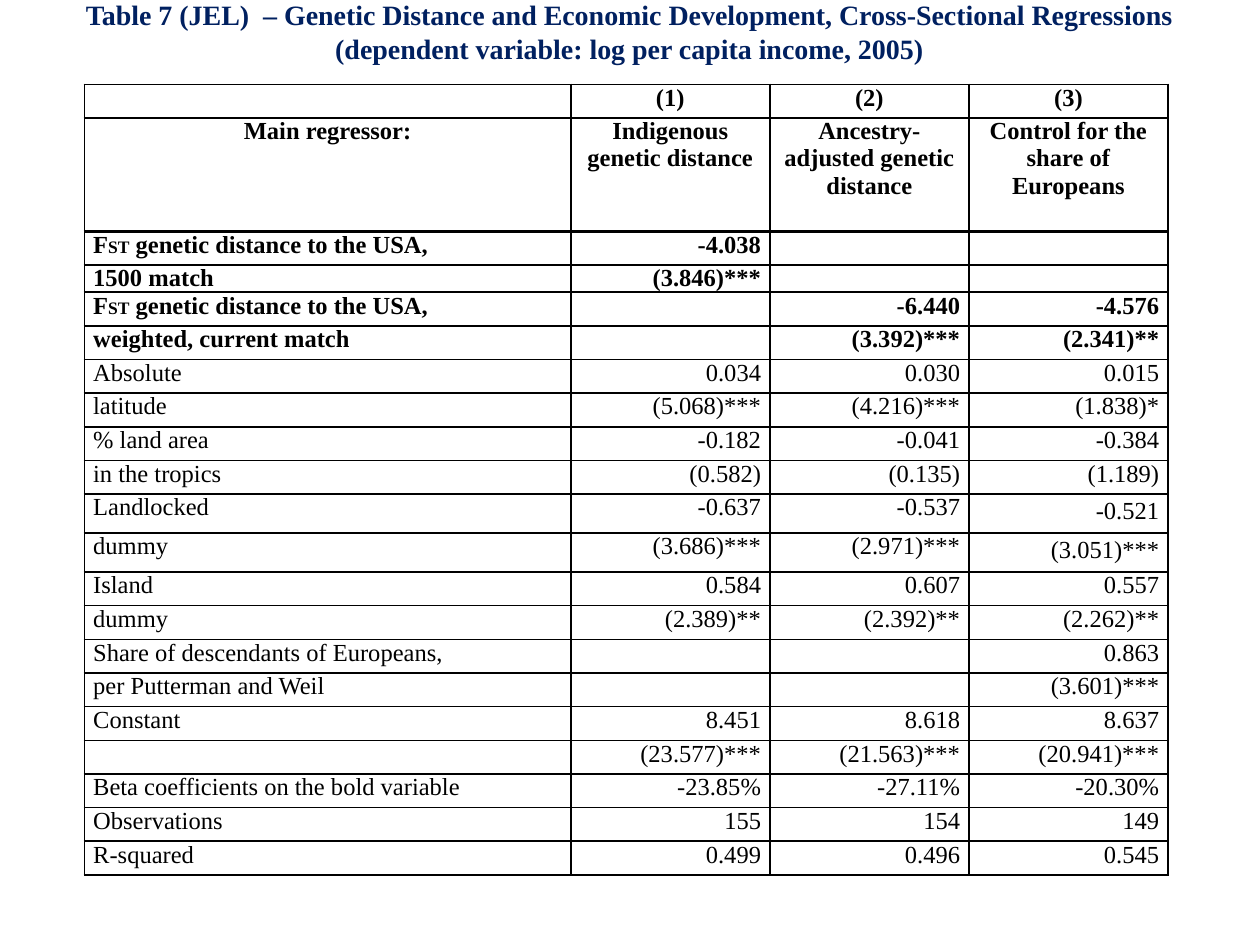
from lxml import etree
from pptx import Presentation
from pptx import util as u
from pptx.dml.color import RGBColor
from pptx.enum import text
from pptx.oxml.ns import qn

THEME = {
    "font": "Times New Roman",
    "title": RGBColor.from_string("002060"),
    "ink": RGBColor.from_string("000000"),
    "title_size": u.Pt(16),
    "body_size": u.Pt(14),
    "subscript_size": u.Pt(10),
    "thin": u.Pt(1),
    "thick": u.Pt(1.5),
}
NO_STYLE = "{2D5ABB26-0587-4C30-8999-92F81FD0307C}"

# Content
TITLE = [
    "Table 7 (JEL)  – Genetic Distance and Economic Development, Cross-Sectional Regressions",
    "(dependent variable: log per capita income, 2005)",
]
FST_LABEL = ("F", "ST", " genetic distance to the USA,")  # middle part is set small

# Each group is one ruled block: coefficient row, then its t-statistic row
HEADERS = [
    [["", "(1)", "(2)", "(3)"]],
    [["Main regressor:", "Indigenous genetic distance",
      "Ancestry-adjusted genetic distance", "Control for the share of Europeans"]],
]
BOLD_REGRESSORS = [
    [[FST_LABEL, "-4.038", "", ""],
     ["1500 match", "(3.846)***", "", ""]],
    [[FST_LABEL, "", "-6.440", "-4.576"],
     ["weighted, current match", "", "(3.392)***", "(2.341)**"]],
]
CONTROLS = [
    [["Absolute", "0.034", "0.030", "0.015"],
     ["latitude", "(5.068)***", "(4.216)***", "(1.838)*"]],
    [["% land area", "-0.182", "-0.041", "-0.384"],
     ["in the tropics", "(0.582)", "(0.135)", "(1.189)"]],
    [["Landlocked", "-0.637", "-0.537", "-0.521"],
     ["dummy", "(3.686)***", "(2.971)***", "(3.051)***"]],
    [["Island", "0.584", "0.607", "0.557"],
     ["dummy", "(2.389)**", "(2.392)**", "(2.262)**"]],
    [["Share of descendants of Europeans,", "", "", "0.863"],
     ["per Putterman and Weil", "", "", "(3.601)***"]],
    [["Constant", "8.451", "8.618", "8.637"],
     ["", "(23.577)***", "(21.563)***", "(20.941)***"]],
    [["Beta coefficients on the bold variable", "-23.85%", "-27.11%", "-20.30%"]],
    [["Observations", "155", "154", "149"]],
    [["R-squared", "0.499", "0.496", "0.545"]],
]
GROUPS = HEADERS + BOLD_REGRESSORS + CONTROLS
THICK_BELOW = {"Main regressor:", "Constant"}  # groups closed by a heavier rule
LOOSE_GROUP = "Landlocked"                     # last column has wider line spacing

# Layout in inches
TABLE_LEFT, TABLE_TOP, TABLE_HEIGHT = 0.67, 0.67, 6.21
COLUMN_WIDTHS = [3.86, 1.58, 1.58, 1.58]
SPECIAL_HEIGHTS = {1: 0.9, 3: 0.15, 10: 0.31, 11: 0.31}
CELL_INSET = 0.07


def style_font(font, size, color, bold):
    font.name = THEME["font"]
    font.size = size
    font.color.rgb = color
    font.bold = bold


def set_border(cell, side, width):
    """Add one cell edge; sides must come in the order L, R, T, B."""
    line = etree.SubElement(cell._tc.get_or_add_tcPr(), qn(f"a:ln{side}"), w=str(width))
    fill = etree.SubElement(line, qn("a:solidFill"))
    etree.SubElement(fill, qn("a:srgbClr"), val=str(THEME["ink"]))


def fill_cell(cell, content, align, bold):
    cell.margin_left = cell.margin_right = u.Inches(CELL_INSET)
    cell.margin_top = cell.margin_bottom = 0
    paragraph = cell.text_frame.paragraphs[0]
    paragraph.alignment = align
    style_font(paragraph.font, THEME["body_size"], THEME["ink"], bold)
    if isinstance(content, tuple):
        for part in content:
            paragraph.add_run().text = part
        paragraph.runs[1].font.size = THEME["subscript_size"]
    elif content:
        paragraph.add_run().text = content
    else:
        # An empty cell keeps the body size so that its row stays low
        etree.SubElement(paragraph._p, qn("a:endParaRPr"),
                         sz=str(int(THEME["body_size"].pt * 100)))
    return paragraph


def add_regression_table(slide):
    row_count = sum(len(group) for group in GROUPS)
    plain_height = ((TABLE_HEIGHT - sum(SPECIAL_HEIGHTS.values()))
                    / (row_count - len(SPECIAL_HEIGHTS)))
    frame = slide.shapes.add_table(
        row_count, len(COLUMN_WIDTHS), u.Inches(TABLE_LEFT), u.Inches(TABLE_TOP),
        u.Inches(sum(COLUMN_WIDTHS)), u.Inches(TABLE_HEIGHT))
    table = frame.table
    table.first_row = table.horz_banding = False
    table._tbl.tblPr.find(qn("a:tableStyleId")).text = NO_STYLE
    for column, width in zip(table.columns, COLUMN_WIDTHS):
        column.width = u.Inches(width)
    for index, row in enumerate(table.rows):
        row.height = u.Inches(SPECIAL_HEIGHTS.get(index, plain_height))

    row_index = 0
    top_rule = THEME["thin"]
    for group in GROUPS:
        name = group[0][0]
        is_header = group in HEADERS
        bold = is_header or group in BOLD_REGRESSORS
        bottom_rule = THEME["thick"] if name in THICK_BELOW else THEME["thin"]
        for line_index, values in enumerate(group):
            for col, content in enumerate(values):
                cell = table.cell(row_index, col)
                align = (text.PP_ALIGN.CENTER if is_header
                         else text.PP_ALIGN.RIGHT if col else text.PP_ALIGN.LEFT)
                paragraph = fill_cell(cell, content, align, bold)
                if name == LOOSE_GROUP and col == len(values) - 1:
                    paragraph.line_spacing = 1.15
                for side in "LR":
                    set_border(cell, side, THEME["thin"])
                if line_index == 0:
                    set_border(cell, "T", top_rule)
                if line_index == len(group) - 1:
                    set_border(cell, "B", bottom_rule)
                cell.fill.background()
            row_index += 1
        top_rule = bottom_rule


def add_title(slide):
    box = slide.shapes.add_textbox(u.Inches(0.55), u.Inches(-0.07),
                                   u.Inches(8.89), u.Inches(0.64))
    frame = box.text_frame
    frame.word_wrap = False
    frame.auto_size = text.MSO_AUTO_SIZE.SHAPE_TO_FIT_TEXT
    frame.vertical_anchor = text.MSO_ANCHOR.MIDDLE
    frame.text = "\n".join(TITLE)
    for paragraph in frame.paragraphs:
        paragraph.alignment = text.PP_ALIGN.CENTER
        style_font(paragraph.font, THEME["title_size"], THEME["title"], True)


def main():
    deck = Presentation()
    deck.slide_width, deck.slide_height = u.Inches(10), u.Inches(7.5)
    slide = deck.slides.add_slide(deck.slide_layouts[6])
    add_regression_table(slide)
    add_title(slide)
    deck.save("out.pptx")


if __name__ == "__main__":
    main()
